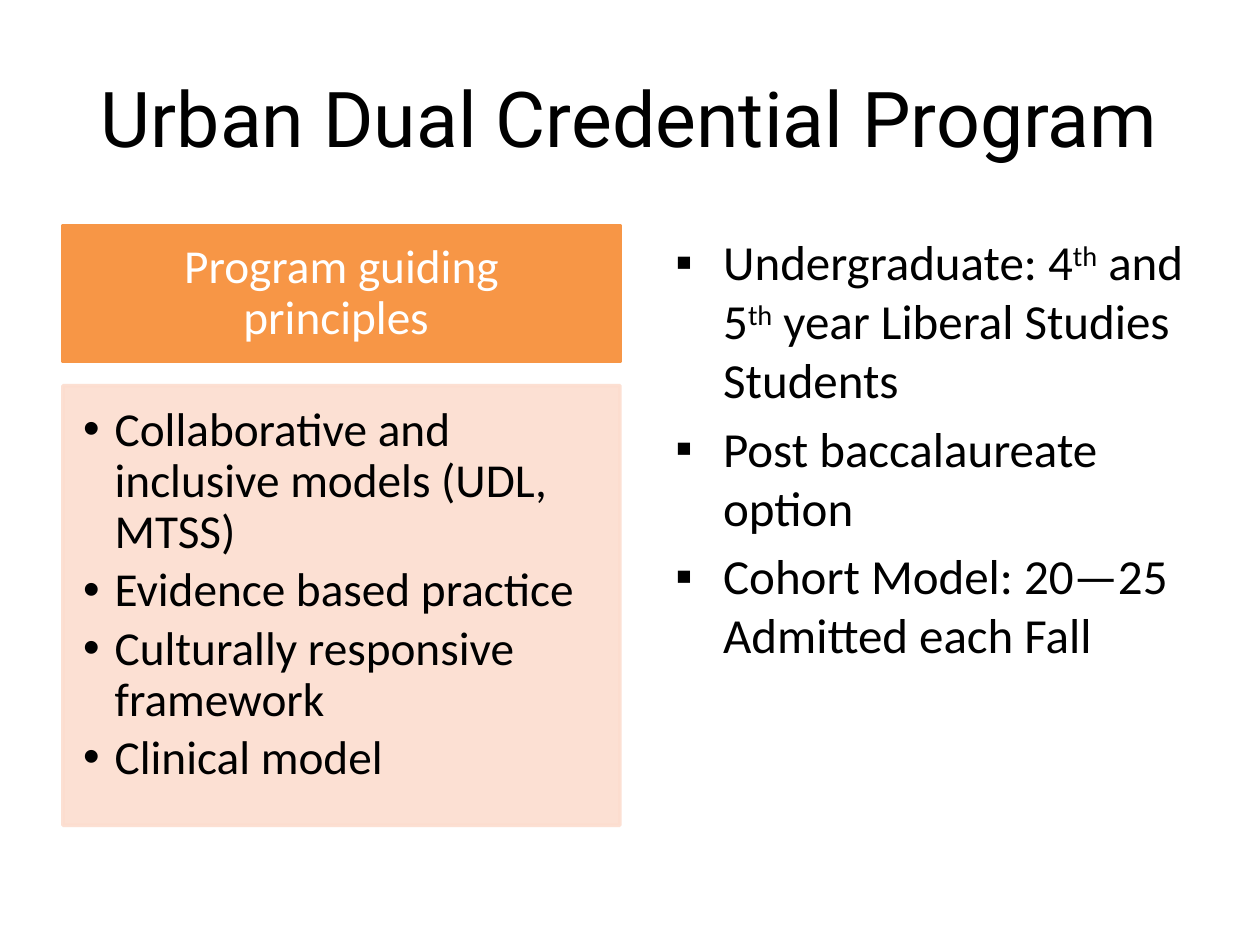
from lxml import etree
from pptx import Presentation
from pptx.dml.color import RGBColor
from pptx.enum.shapes import MSO_SHAPE
from pptx.enum.text import MSO_ANCHOR, MSO_AUTO_SIZE, PP_ALIGN
from pptx.oxml.ns import qn
from pptx.util import Inches, Pt

RECT = MSO_SHAPE.RECTANGLE
TOP, MIDDLE = MSO_ANCHOR.TOP, MSO_ANCHOR.MIDDLE
LEFT, CENTER = PP_ALIGN.LEFT, PP_ALIGN.CENTER
FIXED = MSO_AUTO_SIZE.NONE

TITLE = "Urban Dual Credential Program"
HEAD = "Program guiding principles "
IDEAS = [
    "Collaborative and inclusive models (UDL, MTSS)",
    "Evidence based practice",
    "Culturally responsive framework",
    "Clinical model",
]
FACTS = [
    ["Undergraduate: 4", "th", " and 5", "th", " year Liberal Studies Students"],
    ["Post baccalaureate option"],
    ["Cohort Model: 20—25 Admitted each Fall"],
]

EDGE, ROW, WIDE = 0.5, 1.79, 4.42
HEAD_H, LIST_Y, LIST_H = 1.08, 3.06, 3.49
PAD = (0.1, 0.05, 0.1, 0.05)


def paint(color, tone):
    color.rgb = RGBColor.from_string(tone)


def place(shape, left, top, width, height):
    spot = dict(left=left, top=top, width=width, height=height)
    for key, value in spot.items():
        setattr(shape, key, Inches(value))


def bullet(par, mark, indent):
    props = par._p.get_or_add_pPr()
    props.set("marL", str(Inches(indent)))
    props.set("indent", str(-Inches(indent)))
    etree.SubElement(props, qn("a:buFont")).set("typeface", "Arial")
    etree.SubElement(props, qn("a:buChar")).set("char", mark)


def write(shape, items, size, tone="000000", face="Calibri", pad=PAD,
          anchor=TOP, align=LEFT, mark=None, indent=0, line=1, before=0, after=0):
    frame = shape.text_frame
    sides = ("margin_left", "margin_top", "margin_right", "margin_bottom")
    form = dict(zip(sides, map(Inches, pad)))
    form.update(word_wrap=True, auto_size=FIXED, vertical_anchor=anchor)
    for key, value in form.items():
        setattr(frame, key, value)
    for i, item in enumerate(items):
        par = frame.add_paragraph() if i else frame.paragraphs[0]
        look = dict(alignment=align, line_spacing=line,
                    space_before=Pt(before if i else 0), space_after=Pt(after))
        for key, value in look.items():
            setattr(par, key, value)
        if mark:
            bullet(par, mark, indent)
        for part in [item] if isinstance(item, str) else item:
            run = par.add_run()
            run.text = part
            for key, value in dict(name=face, size=Pt(size)).items():
                setattr(run.font, key, value)
            paint(run.font.color, tone)
            if part == "th":
                run._r.get_or_add_rPr().set("baseline", "30000")


def panel(slide, top, height, tone, alpha=None):
    box = slide.shapes.add_shape(RECT, 0, 0, 0, 0)
    place(box, EDGE, top, WIDE, height)
    box.shadow.inherit = False
    box.line.width = Pt(2)
    for fill in (box.fill, box.line.fill):
        fill.solid()
        paint(fill.fore_color, tone)
    if alpha:
        for color in box._element.spPr.iter(qn("a:srgbClr")):
            etree.SubElement(color, qn("a:alpha")).set("val", str(alpha * 1000))
    return box


def main():
    deck = Presentation()
    deck.slide_width, deck.slide_height = Inches(10), Inches(7.5)
    slide = deck.slides.add_slide(deck.slide_layouts[1])
    title, body = slide.placeholders

    place(title, EDGE, 0.3, 9, 1.25)
    write(title, [TITLE], 44, face="Roboto", anchor=MIDDLE, align=CENTER)

    place(body, 5.26, ROW, WIDE, 4.95)
    write(body, FACTS, 28, mark="▪", indent=0.38, before=5.6)

    head = panel(slide, ROW, HEAD_H, "F79646")
    write(head, [HEAD], 27, "FFFFFF", pad=(0.21, 0.12, 0.21, 0.12),
          anchor=MIDDLE, align=CENTER, line=0.9)

    ideas = panel(slide, LIST_Y, LIST_H, "FCDDCF", 90)
    write(ideas, IDEAS, 27, pad=(0.16, 0.16, 0.21, 0.24),
          mark="•", indent=0.25, line=0.9, after=4.05)

    deck.save("out.pptx")


if __name__ == "__main__":
    main()
